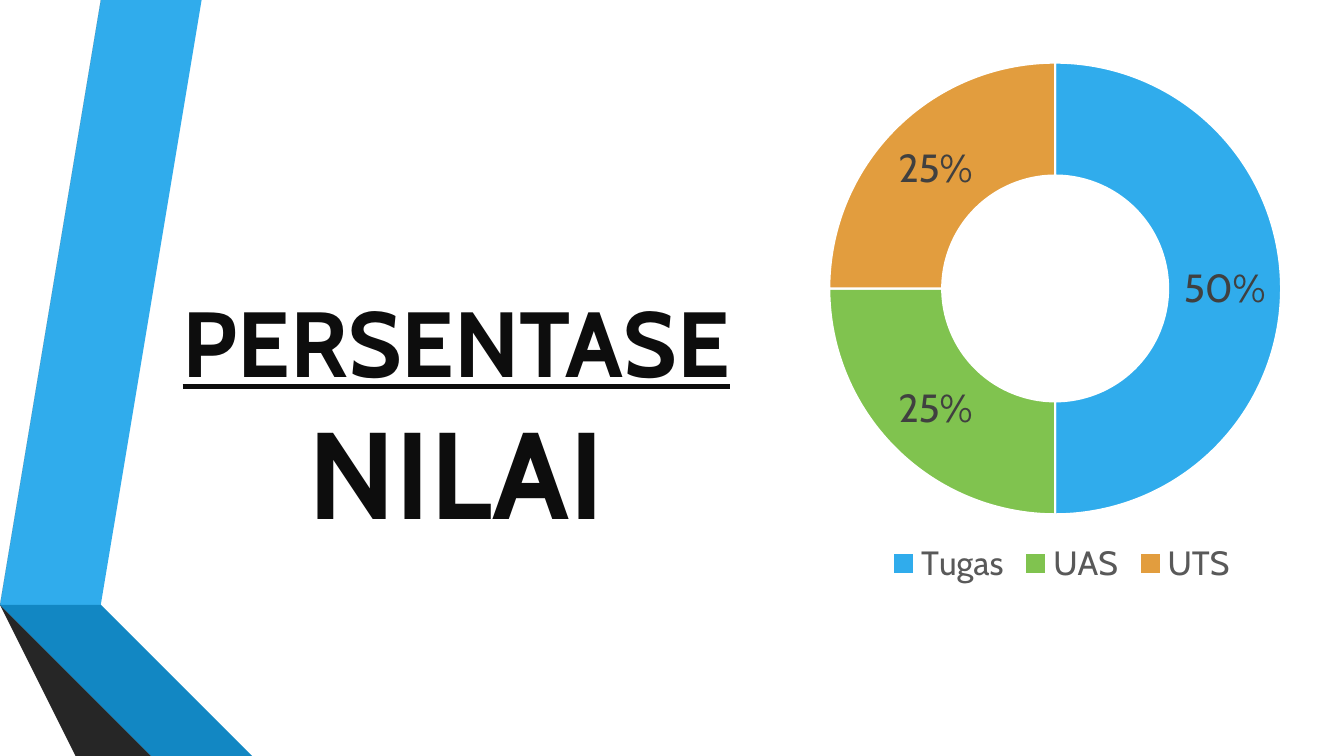
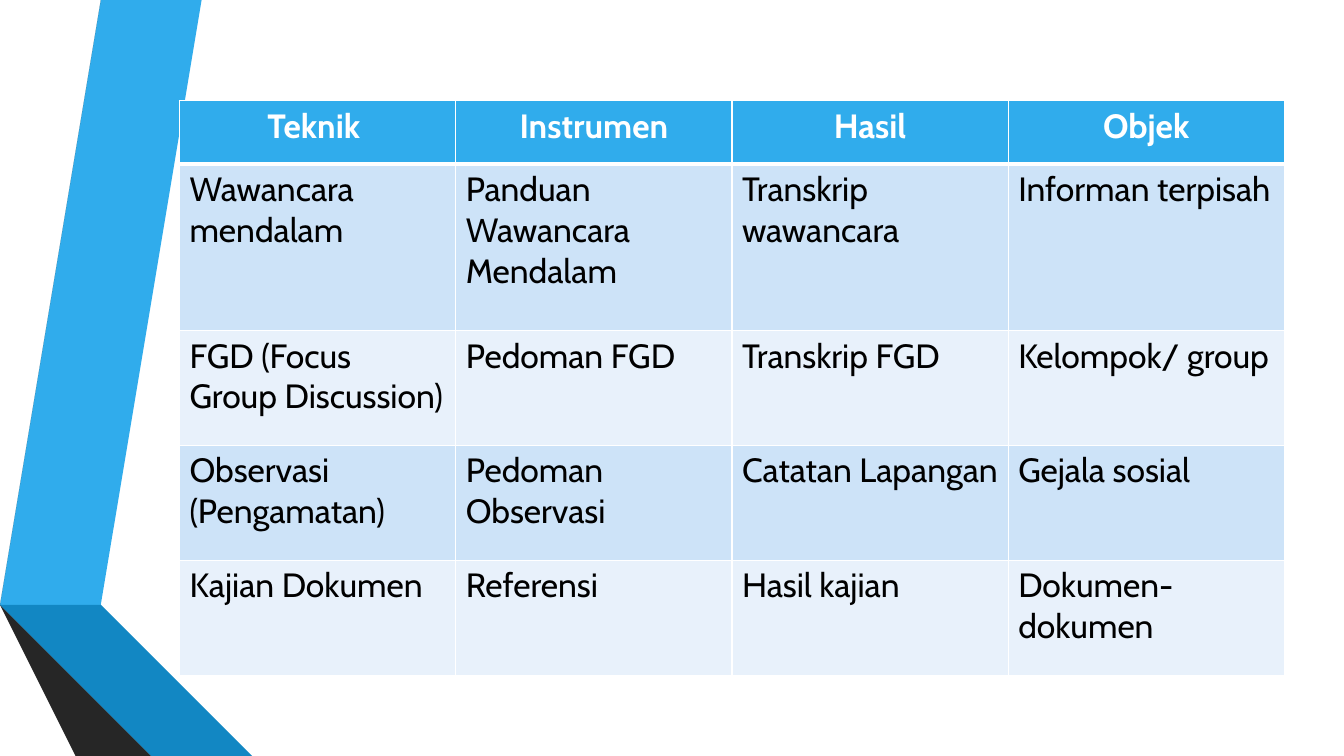
from lxml import etree
from pptx import Presentation
from pptx import util as u
from pptx.chart import data
from pptx.dml.color import RGBColor
from pptx.enum import chart as ch, text
from pptx.oxml import ns

FONT = "Cabin"
WHITE, BLACK, INK, GRAY = "FFFFFF", "000000", "0D0D0D", "595959"
BLUE, GREEN, GOLD = "30ACEC", "80C34F", "E29D3E"
BANDS = ["CDE3F8", "E8F1FB"]
RIBBON = [
    (BLUE, [(0.5, 5.78), (0.77, 5.83), (1.73, 0), (1.45, 0)]),
    (GRAY, [(1.39, 0), (1.11, 0), (0.16, 5.73), (0.44, 5.77)]),
    ("262626", [(0.16, 5.73), (1.45, 7.5), (1.51, 7.5)]),
    ("0C5A82", [(0.5, 5.79), (2.08, 7.5), (2.14, 7.5)]),
    ("1287C3", [(0.5, 5.78), (0.5, 5.79), (2.14, 7.5), (2.83, 7.5), (0.77, 5.83)]),
    ("404040", [(2.02, 7.5), (0.48, 5.83), (0.44, 5.77), (0.16, 5.73), (1.51, 7.5)]),
]
SHARES = [("Tugas", 50, BLUE), ("UAS", 25, GREEN), ("UTS", 25, GOLD)]
ROWS = [
    ["Teknik ", "Instrumen", "Hasil", "Objek"],
    ["Wawancara mendalam", "Panduan Wawancara Mendalam",
     "Transkrip wawancara", "Informan terpisah"],
    ["FGD (Focus Group Discussion)", "Pedoman FGD", "Transkrip FGD", "Kelompok/ group"],
    ["Observasi (Pengamatan)", "Pedoman Observasi", "Catatan Lapangan", "Gejala sosial"],
    ["Kajian Dokumen", "Referensi", "Hasil kajian", "Dokumen-dokumen"],
]
HEIGHTS = [0.63, 1.65, 1.14, 1.14, 1.14]


def rgb(code):
    return RGBColor.from_string(code)


def paint(fill, code):
    fill.solid()
    fill.fore_color.rgb = rgb(code)


def style(font, size, color, bold=False):
    font.name, font.size, font.bold = FONT, u.Pt(size), bold
    font.color.rgb = rgb(color)


def inches(box):
    return [u.Inches(side) for side in box]


def add_xml(parent, tag, **attrs):
    return etree.SubElement(parent, ns.qn(tag), attrs)


def add_ribbon(slide):
    """Draw the folded ribbon and move it to the slide master."""
    tree = slide.slide_layout.slide_master.element.cSld.spTree
    for color, points in RIBBON:
        pen = slide.shapes.build_freeform(*points[0], scale=u.Inches(1))
        pen.add_line_segments(points[1:], close=True)
        shape = pen.convert_to_shape()
        shape.shadow.inherit = False
        paint(shape.fill, color)
        shape.line.fill.background()
        tree.append(shape.element)


def add_title(slide, box):
    title = slide.shapes.title
    title.left, title.top, title.width, title.height = inches(box)
    frame = title.text_frame
    frame.word_wrap, frame.auto_size = True, text.MSO_AUTO_SIZE.NONE
    frame.vertical_anchor = text.MSO_ANCHOR.MIDDLE
    para = frame.paragraphs[0]
    para.alignment = text.PP_ALIGN.CENTER
    for words, size, under in [("PERSENTASE", 66, True), (" ", 66, False),
                               ("NILAI", 88, False)]:
        run = para.add_run()
        run.text = words
        style(run.font, size, INK, bold=True)
        run.font.underline = under


def place_plot(chart, x, y, w, h):
    """Fix the plot area, in fractions of the chart."""
    area = chart.element.chart.plotArea
    for old in area.findall(ns.qn("c:layout")):
        area.remove(old)
    layout = etree.Element(ns.qn("c:layout"))
    manual = add_xml(layout, "c:manualLayout")
    add_xml(manual, "c:layoutTarget", val="inner")
    for tag in ("xMode", "yMode"):
        add_xml(manual, "c:" + tag, val="edge")
    for tag, part in zip("xywh", (x, y, w, h)):
        add_xml(manual, "c:" + tag, val=str(part))
    area.insert(0, layout)


def add_ring(slide, box):
    info = data.CategoryChartData()
    info.categories = [name for name, _, _ in SHARES]
    info.add_series("Series 1", [share for _, share, _ in SHARES])
    chart = slide.shapes.add_chart(
        ch.XL_CHART_TYPE.DOUGHNUT, *inches(box), info).chart
    style(chart.font, 10, BLACK)
    chart.has_title = False
    chart.has_legend = True
    chart.legend.position = ch.XL_LEGEND_POSITION.BOTTOM
    chart.legend.include_in_layout = False
    style(chart.legend.font, 24, GRAY)

    plot = chart.plots[0]
    plot.vary_by_categories = True
    plot.has_data_labels = True
    labels = plot.data_labels
    labels.show_percentage, labels.show_value = True, False
    labels.number_format, labels.number_format_is_linked = "0%", False
    style(labels.font, 28, "404040")
    for index, (_, _, color) in enumerate(SHARES):
        part = plot.series[0].points[index].format
        paint(part.fill, color)
        paint(part.line.fill, WHITE)
        part.line.width = u.Pt(1.5)
    for hole in chart.element.iter(ns.qn("c:holeSize")):
        hole.set("val", "75")
    place_plot(chart, 0.14, 0.03, 0.7, 0.83)


def add_edges(cell, widths):
    """Give a cell white borders: left, right, top, bottom, in points."""
    props = cell._tc.get_or_add_tcPr()
    for side, width in zip("LRTB", widths):
        line = add_xml(props, "a:ln" + side, w=str(u.Pt(width)))
        add_xml(add_xml(line, "a:solidFill"), "a:srgbClr", val=WHITE)


def add_grid(slide, box):
    table = slide.shapes.add_table(len(ROWS), len(ROWS[0]), *inches(box)).table
    for col in table.columns:
        col.width = u.Inches(box[2] / len(ROWS[0]))
    for r, (row, height) in enumerate(zip(ROWS, HEIGHTS)):
        head = r == 0
        table.rows[r].height = u.Inches(height)
        for c, words in enumerate(row):
            cell = table.cell(r, c)
            add_edges(cell, (1, 1, 3 if r == 1 else 1, 3 if head else 1))
            paint(cell.fill, BLUE if head else BANDS[(r - 1) % 2])
            para = cell.text_frame.paragraphs[0]
            para.text = words
            para.alignment = text.PP_ALIGN.CENTER if head else text.PP_ALIGN.LEFT
            style(para.runs[0].font, 24, WHITE if head else BLACK, bold=head)


def main():
    deck = Presentation()
    deck.slide_width, deck.slide_height = inches((13.33, 7.5))
    title_only, blank = deck.slide_layouts[5], deck.slide_layouts[6]

    grades = deck.slides.add_slide(title_only)
    add_ribbon(grades)
    add_title(grades, (1.49, 1.19, 6.07, 5.84))
    add_ring(grades, (7.32, 0.46, 6.42, 5.4))

    methods = deck.slides.add_slide(blank)
    add_grid(methods, (1.78, 1, 10.96, 5.7))
    deck.save("out.pptx")


if __name__ == "__main__":
    main()
